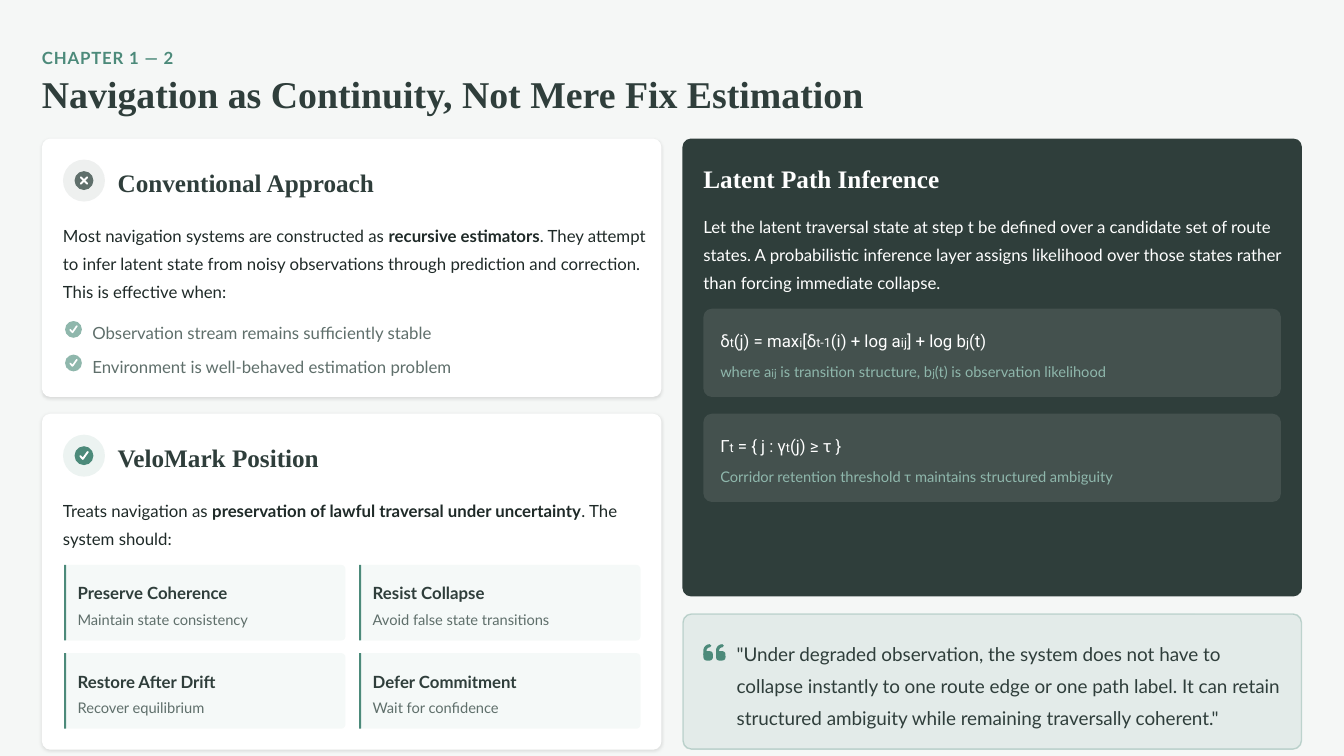
import math

from lxml import etree
from pptx import Presentation
from pptx.dml.color import RGBColor
from pptx.enum.shapes import MSO_SHAPE
from pptx.enum.text import MSO_ANCHOR
from pptx.oxml.ns import qn
from pptx.util import Pt

ROUNDED = MSO_SHAPE.ROUNDED_RECTANGLE
RECT = MSO_SHAPE.RECTANGLE
OVAL = MSO_SHAPE.OVAL
MIDDLE = MSO_ANCHOR.MIDDLE

COLORS = {
    "page": "F5F7F6", "white": "FFFFFF", "dark": "2F3E3B", "body": "1F2A28",
    "muted": "5F6F6B", "green": "4C8A7A", "mint": "8FB7AC", "black": "000000",
}
SANS, SERIF, MATH = "Lato", "Times New Roman", "Roboto"
PAD = 15
CARD_W = 442.5
TEXT_W = 418.5

CHECK = [(-0.2, 0.02), (-0.06, 0.17), (0.2, -0.2)]
CROSS = [[(-0.17, -0.17), (0.17, 0.17)], [(-0.17, 0.17), (0.17, -0.17)]]


def rgb(name):
    return RGBColor.from_string(COLORS[name])


def set_alpha(color_parent, percent):
    """Make the colours below an XML element partly transparent."""
    for clr in color_parent.iter(qn("a:srgbClr")):
        etree.SubElement(clr, qn("a:alpha"), val=str(percent * 1000))


def add_shape(slide, kind, x, y, w, h, color, alpha=100, radius=0):
    sp = slide.shapes.add_shape(kind, Pt(x), Pt(y), Pt(w), Pt(h))
    sp.shadow.inherit = False
    sp.fill.solid()
    sp.fill.fore_color.rgb = rgb(color)
    sp.line.fill.background()
    if radius:
        sp.adjustments[0] = radius / min(w, h)
    if alpha < 100:
        set_alpha(sp.element.spPr, alpha)
    return sp


def add_stroke(slide, points, color, width):
    """Draw an open line with round ends through points."""
    start, *rest = [(Pt(x), Pt(y)) for x, y in points]
    builder = slide.shapes.build_freeform(*start)
    builder.add_line_segments(rest, close=False)
    sp = builder.convert_to_shape()
    sp.shadow.inherit = False
    sp.fill.background()
    sp.line.color.rgb = rgb(color)
    sp.line.width = Pt(width)
    sp.element.spPr.find(qn("a:ln")).set("cap", "rnd")


def add_text(slide, x, y, w, h, pieces, color, size=12, font=SANS,
             bold=False, spacing=1.3, sub=None, tracking=0):
    """Every second piece is a small index if sub is given, otherwise bold."""
    tf = slide.shapes.add_textbox(Pt(x), Pt(y), Pt(w), Pt(h)).text_frame
    tf.word_wrap = True
    tf.vertical_anchor = MIDDLE
    tf.margin_left = tf.margin_right = tf.margin_top = tf.margin_bottom = 0
    p = tf.paragraphs[0]
    p.line_spacing = spacing
    for i, piece in enumerate(pieces):
        r = p.add_run()
        r.text = piece
        marked = i % 2 == 1
        r.font.name = font
        r.font.size = Pt(sub if marked and sub else size)
        r.font.bold = bold or (marked and not sub)
        r.font.color.rgb = rgb(color)
        if tracking:
            r.font._element.set("spc", str(tracking))


def add_badge(slide, cx, cy, d, color, strokes):
    add_shape(slide, OVAL, cx - d / 2, cy - d / 2, d, d, color)
    for points in strokes:
        add_stroke(slide, [(cx + d * u, cy + d * v) for u, v in points],
                   "white", d / 10)


def add_header(slide, x, y):
    add_text(slide, x, y, 900, 18, ["CHAPTER 1 — 2"], "green", bold=True,
             tracking=60)
    add_text(slide, x, y + 24, 900, 30,
             ["Navigation as Continuity, Not Mere Fix Estimation"], "dark",
             size=27, font=SERIF, bold=True, spacing=0.9)


def add_white_card(slide, x, y, h, title, color, strokes, body, body_h):
    card = add_shape(slide, ROUNDED, x, y, CARD_W, h, "white", radius=6)
    effects = card.element.spPr.find(qn("a:effectLst"))
    shadow = etree.SubElement(effects, qn("a:outerShdw"), blurRad=str(Pt(2.2)),
                              dist=str(Pt(0.8)), dir="5400000", rotWithShape="0")
    etree.SubElement(shadow, qn("a:srgbClr"), val=COLORS["black"])
    set_alpha(shadow, 10)
    add_shape(slide, OVAL, x + PAD, y + PAD, 30, 30, color, alpha=10)
    add_badge(slide, x + 30, y + 30, 13.5, color, strokes)
    add_text(slide, x + 54, y + 18, 350, 24, [title], "dark", size=18,
             font=SERIF, bold=True, spacing=1.1)
    add_text(slide, x + PAD, y + 57.2, TEXT_W, body_h, body, "body", spacing=1.4)


def add_conventional(slide, x, y):
    add_white_card(slide, x, y, 184.5, "Conventional Approach", "muted", CROSS, [
        "Most navigation systems are constructed as ", "recursive estimators",
        ". They attempt to infer latent state from noisy observations through "
        "prediction and correction. This is effective when:"], 58.5)
    conditions = ["Observation stream remains sufficiently stable",
                  "Environment is well-behaved estimation problem"]
    for i, condition in enumerate(conditions):
        top = y + 127.8 + 24 * i
        add_badge(slide, x + 22.5, top + 8.5, 12, "mint", [CHECK])
        add_text(slide, x + 36, top, 380, 18, [condition], "muted")


def add_position(slide, x, y):
    add_white_card(slide, x, y, 240, "VeloMark Position", "green", [CHECK], [
        "Treats navigation as ",
        "preservation of lawful traversal under uncertainty",
        ". The system should:"], 39)
    goals = [("Preserve Coherence", "Maintain state consistency"),
             ("Resist Collapse", "Avoid false state transitions"),
             ("Restore After Drift", "Recover equilibrium"),
             ("Defer Commitment", "Wait for confidence")]
    for i, (goal, detail) in enumerate(goals):
        row, col = divmod(i, 2)
        left, top = x + 15.75 + 210.75 * col, y + 108 + 63 * row
        add_shape(slide, ROUNDED, left, top, 201, 54, "green", alpha=5, radius=3)
        add_shape(slide, RECT, left, top, 1.5, 54, "green")
        add_text(slide, left + 9.75, top + 9, 188, 18, [goal], "dark", bold=True)
        add_text(slide, left + 9.75, top + 30, 188, 15, [detail], "muted",
                 size=10.5, spacing=1.2)


def add_inference(slide, x, y):
    add_shape(slide, ROUNDED, x, y, CARD_W, 327, "dark", radius=6)
    add_text(slide, x + PAD, y + PAD, TEXT_W, 24, ["Latent Path Inference"],
             "white", size=18, font=SERIF, bold=True, spacing=1.1)
    add_text(slide, x + PAD, y + 50.8, TEXT_W, 58.5, [
        "Let the latent traversal state at step t be defined over a candidate "
        "set of route states. A probabilistic inference layer assigns likelihood "
        "over those states rather than forcing immediate collapse."],
        "white", spacing=1.4)
    formulas = [
        (["δ", "t", "(j) = max", "i", "[δ", "t-1", "(i) + log a", "ij",
          "] + log b", "j", "(t)"],
         ["where a", "ij", " is transition structure, b", "j",
          "(t) is observation likelihood"]),
        (["Γ", "t", " = { j : γ", "t", "(j) ≥ τ }"],
         ["Corridor retention threshold τ maintains structured ambiguity"]),
    ]
    left = x + PAD
    for i, (formula, note) in enumerate(formulas):
        top = y + 121.5 + 75 * i
        add_shape(slide, ROUNDED, left, top, 412.5, 63, "white", alpha=10, radius=6)
        add_text(slide, left + 12, top + 12, 394, 18, formula, "white",
                 font=MATH, sub=9)
        add_text(slide, left + 12, top + 36, 394, 15, note, "mint", size=10.5,
                 spacing=1.2, sub=7.9)


def add_quote_mark(slide, x, y):
    arc = [math.radians(180 + 10 * i) for i in range(10)]
    hook = [(x + 4.5 + 3.4 * math.cos(a), y + 4.5 + 3.4 * math.sin(a)) for a in arc]
    add_stroke(slide, [(x + 1.1, y + 7.5), *hook], "green", 2.25)
    add_shape(slide, ROUNDED, x, y + 4.9, 6.75, 6.75, "green", radius=2.25)


def add_quote(slide, x, y):
    box = add_shape(slide, ROUNDED, x, y, 441.75, 96.5, "green", radius=6)
    box.line.color.rgb = rgb("green")
    box.line.width = Pt(1)
    set_alpha(box.element.spPr.find(qn("a:solidFill")), 10)
    set_alpha(box.element.spPr.find(qn("a:ln")), 30)
    for i in range(2):
        add_quote_mark(slide, x + 14.6 + 9 * i, y + 21.6)
    add_text(slide, x + 38.3, y + 15, 394.5, 66, [
        '"Under degraded observation, the system does not have to collapse '
        "instantly to one route edge or one path label. It can retain structured "
        'ambiguity while remaining traversally coherent."'],
        "dark", size=13.5, spacing=1.4)


def main():
    prs = Presentation()
    prs.slide_width, prs.slide_height = Pt(960), Pt(540)
    slide = prs.slides.add_slide(prs.slide_layouts[6])
    slide.background.fill.solid()
    slide.background.fill.fore_color.rgb = rgb("page")
    add_header(slide, 30, 30)
    add_conventional(slide, 30, 99)
    add_position(slide, 30, 295.5)
    add_inference(slide, 487.5, 99)
    add_quote(slide, 487.9, 438.6)
    prs.save("out.pptx")


if __name__ == "__main__":
    main()
